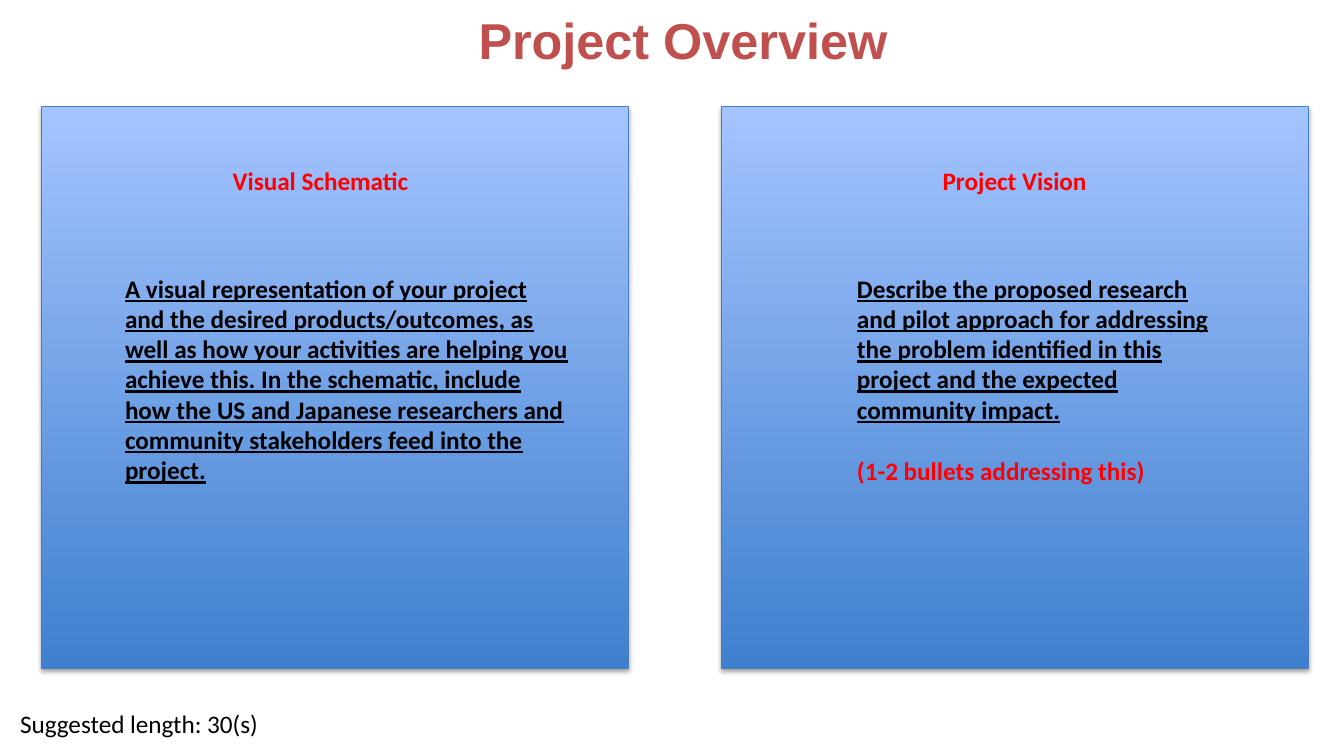
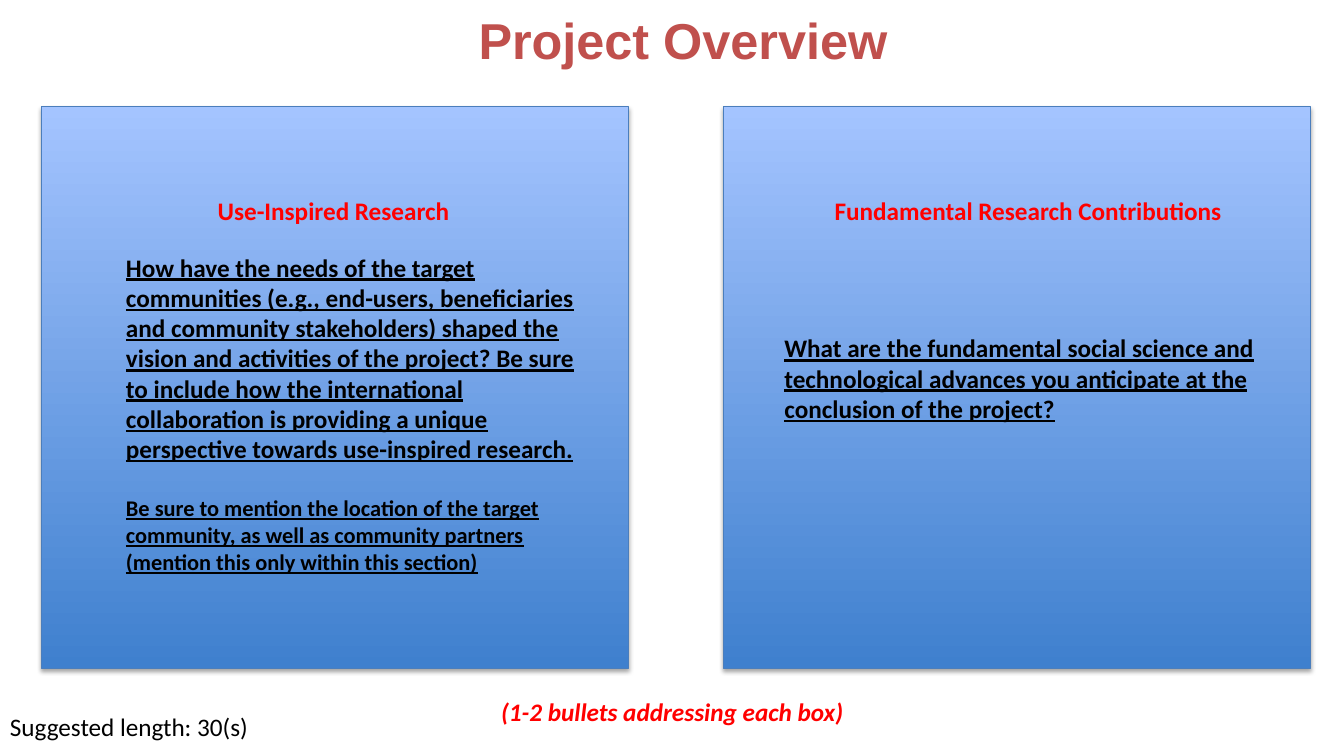
"""Build two project overview slides, each with a pair of gradient panels."""
from lxml import etree
from pptx import Presentation
from pptx.dml.color import RGBColor
from pptx.enum.shapes import MSO_SHAPE
from pptx.enum.text import MSO_ANCHOR, MSO_AUTO_SIZE, PP_ALIGN
from pptx.oxml import parse_xml
from pptx.util import Emu, Pt

PX = 9144
BLACK, WHITE, RED, TITLE_RED = "000000", "FFFFFF", "FF0000", "C0504D"
PANEL_BOTTOM, PANEL_TOP, PANEL_EDGE = "3F80CE", "A4C4FF", "4B7EBC"
PANEL_Y, PANEL_WIDTH, PANEL_HEIGHT = 106, 582, 557
LINE_HEIGHT, HEADING_HEIGHT = 40, 40
TEXT_INSET, BODY_INSET = 10, 60
BLANK_LINE = Pt(22)
SHADOW = (
    '<a:outerShdw xmlns:a="http://schemas.openxmlformats.org/drawingml/2006/main" '
    'blurRad="40000" dist="23000" dir="5400000" rotWithShape="0">'
    '<a:srgbClr val="000000"><a:alpha val="35000"/></a:srgbClr></a:outerShdw>'
)


def rgb(value):
    return RGBColor.from_string(value)


def add_text(slide, box, paragraphs, inset=TEXT_INSET, wrap=False):
    label = slide.shapes.add_textbox(*[Emu(length * PX) for length in box])
    frame = label.text_frame
    frame.word_wrap = wrap
    frame.margin_left = Emu(inset * PX)
    frame.text = "\n".join(text for text, *_ in paragraphs)
    for index, (paragraph, (_, size, color, styles)) in enumerate(zip(frame.paragraphs, paragraphs)):
        paragraph.font.name = "Calibri"
        paragraph.font.size = Pt(size)
        paragraph.font.color.rgb = rgb(color)
        paragraph.font.bold = "b" in styles
        paragraph.font.underline = "u" in styles
        paragraph.font.italic = "i" in styles
        if index:
            paragraph.space_before = BLANK_LINE
    return label


overviews = [
    {
        "length_at": (10, 698, 265),
        "heading_y": 159,
        "panels": [
            (41, "Visual Schematic", (221, 196), (64, 266, 510, 222), [
                ("A visual representation of your project and the desired products/outcomes, "
                 "as well as how your activities are helping you achieve this. In the schematic, "
                 "include how the US and Japanese researchers and community stakeholders feed "
                 "into the project.", 18, BLACK, "bu"),
            ]),
            (716, "Project Vision", (925, 164), (790, 266, 433, 252), [
                ("Describe the proposed research and pilot approach for addressing the problem "
                 "identified in this project and the expected community impact.", 18, BLACK, "bu"),
                ("(1-2 bullets addressing this)", 18, RED, "b"),
            ]),
        ],
        "note": None,
    },
    {
        "length_at": (0, 701, 259),
        "heading_y": 189,
        "panels": [
            (41, "Use-Inspired Research", (206, 251), (65, 245, 533, 333), [
                ("How have the needs of the target communities (e.g., end-users, beneficiaries "
                 "and community stakeholders) shaped the vision and activities of the project? "
                 "Be sure to include how the international collaboration is providing a unique "
                 "perspective towards use-inspired research.", 18, BLACK, "bu"),
                ("Be sure to mention the location of the target community, as well as community "
                 "partners (mention this only within this section)", 16, BLACK, "bu"),
            ]),
            (718, "Fundamental Research Contributions", (818, 404), (718, 325, 573, 101), [
                ("What are the fundamental social science and technological advances you "
                 "anticipate at the conclusion of the project?", 18, BLACK, "bu"),
            ]),
        ],
        "note": "(1-2 bullets addressing each box)",
    },
]

deck = Presentation()
deck.slide_width, deck.slide_height = Emu(1333 * PX), Emu(750 * PX)

for overview in overviews:
    slide = deck.slides.add_slide(deck.slide_layouts[5])

    title = slide.shapes.title
    title.left, title.top, title.width, title.height = [Emu(n * PX) for n in (141, 11, 1073, 57)]
    title.text_frame.text = "Project Overview"
    title.text_frame.auto_size = MSO_AUTO_SIZE.NONE
    title.text_frame.vertical_anchor = MSO_ANCHOR.MIDDLE
    heading = title.text_frame.paragraphs[0]
    heading.alignment = PP_ALIGN.CENTER
    heading.font.name, heading.font.size, heading.font.bold = "Arial", Pt(36), True
    heading.font.color.rgb = rgb(TITLE_RED)

    for panel_x, topic, (topic_x, topic_width), body_box, body in overview["panels"]:
        panel_box = (panel_x, PANEL_Y, PANEL_WIDTH, PANEL_HEIGHT)
        panel = slide.shapes.add_shape(MSO_SHAPE.RECTANGLE, *[Emu(n * PX) for n in panel_box])
        panel.fill.gradient()
        panel.fill.gradient_angle = 90
        for stop, color in zip(panel.fill.gradient_stops, (PANEL_BOTTOM, PANEL_TOP)):
            stop.color.rgb = rgb(color)
        panel.line.color.rgb = rgb(PANEL_EDGE)
        panel.line.width = Pt(0.75)
        panel.shadow.inherit = False
        panel._element.spPr.effectLst.append(parse_xml(SHADOW)) if hasattr(
            panel._element.spPr, "effectLst") else etree.SubElement(panel._element.spPr, "effectLst")

        topic_box = (topic_x, overview["heading_y"], topic_width, HEADING_HEIGHT)
        add_text(slide, topic_box, [(topic, 18, RED, "b")])
        add_text(slide, body_box, body, BODY_INSET, True)

    add_text(slide, (*overview["length_at"], LINE_HEIGHT), [("Suggested length: 30(s)", 18, BLACK, "")])
    if overview["note"]:
        note_box = (437, 686, 413, LINE_HEIGHT)
        note = add_text(slide, note_box, [(overview["note"], 18, RED, "bi")], BODY_INSET, True)
        note.fill.solid()
        note.fill.fore_color.rgb = rgb(WHITE)

deck.save("out.pptx")
